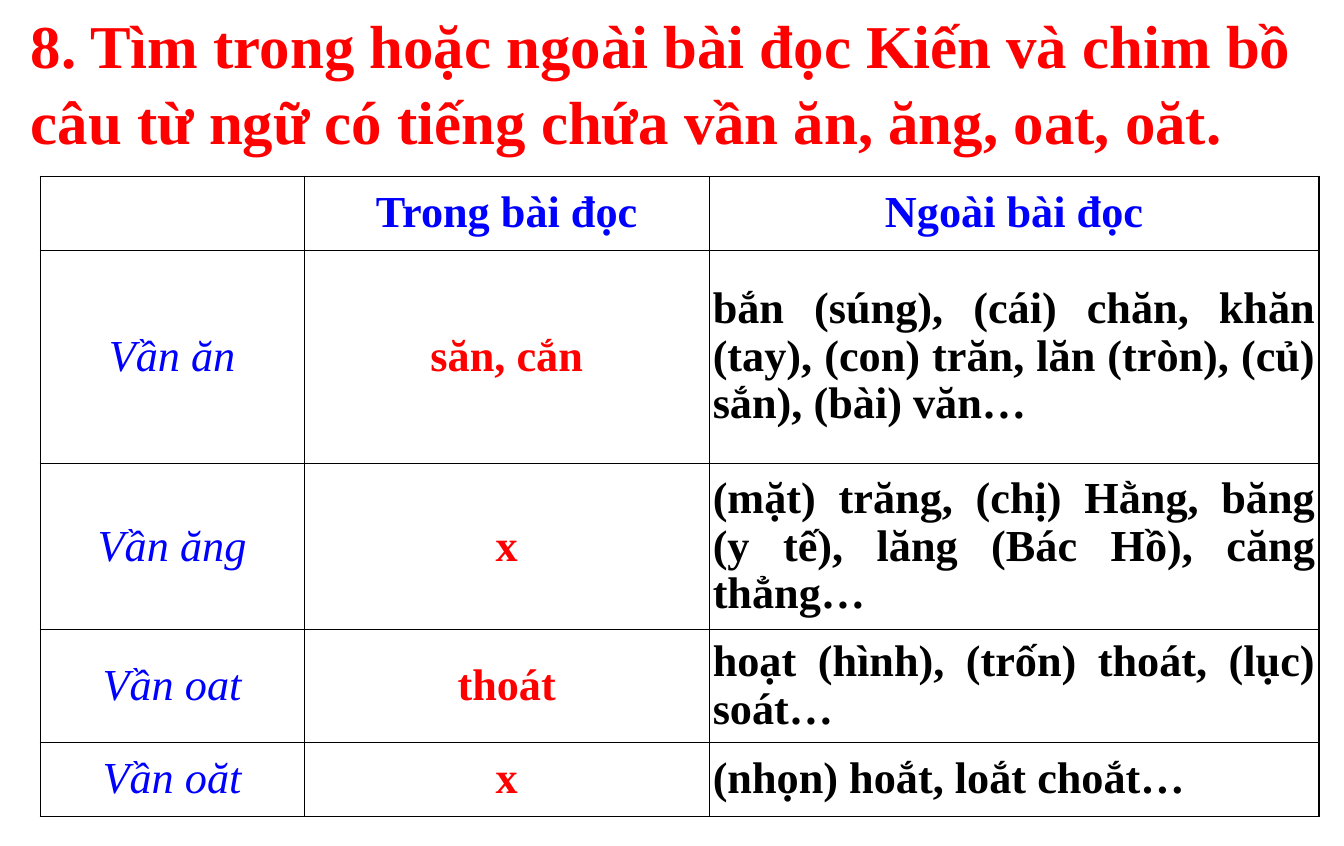
from lxml import etree
from pptx import Presentation
from pptx.dml import color
from pptx.enum import text
from pptx.oxml import ns
from pptx.util import Pt

FONT = "Times New Roman"
RED, BLUE, BLACK = "FF0000", "0000FF", "000000"
COLUMN_WIDTHS = [191, 293, 441]
ROW_HEIGHTS = [53.5, 154.5, 120, 81.5, 53.5]
HEADERS = ["", "Trong bài đọc", "Ngoài bài đọc"]
RHYMES = [
    ["Vần ăn", "săn, cắn",
     "bắn (súng), (cái) chăn, khăn (tay), (con) trăn, lăn (tròn), (củ) sắn), (bài) văn…"],
    ["Vần ăng", "x",
     "(mặt) trăng, (chị) Hằng, băng (y tế), lăng (Bác Hồ), căng thẳng…"],
    ["Vần oat", "thoát", "hoạt (hình), (trốn) thoát, (lục) soát…"],
    ["Vần oăt", "x", "(nhọn) hoắt, loắt choắt…"],
]
CENTER, JUSTIFY = text.PP_ALIGN.CENTER, text.PP_ALIGN.JUSTIFY
HEADER_STYLE = (BLUE, True, False, CENTER)
COLUMN_STYLES = [
    (BLUE, False, True, CENTER),
    (RED, True, False, CENTER),
    (BLACK, True, False, JUSTIFY),
]


def rgb(value):
    return color.RGBColor.from_string(value)


def format_text(text_frame, size, hex_color, bold, italic, alignment, spacing):
    for paragraph in text_frame.paragraphs:
        paragraph.alignment = alignment
        paragraph.line_spacing = spacing
        for run in paragraph.runs:
            run.font.name = FONT
            run.font.size = Pt(size)
            run.font.bold = bold
            run.font.italic = italic
            run.font.color.rgb = rgb(hex_color)


def add_borders(cell):
    properties = cell._tc.get_or_add_tcPr()
    for position, side in enumerate(["lnL", "lnR", "lnT", "lnB"]):
        line = etree.Element(ns.qn(f"a:{side}"), w=str(Pt(1)))
        fill = etree.SubElement(line, ns.qn("a:solidFill"))
        etree.SubElement(fill, ns.qn("a:srgbClr"), val=BLACK)
        properties.insert(position, line)


def add_title(slide, left, top, width, height):
    title = slide.shapes.title
    title.left, title.top, title.width, title.height = map(Pt, (left, top, width, height))
    text_frame = title.text_frame
    text_frame.text = "8. Tìm trong hoặc ngoài bài đọc Kiến và chim bồ câu từ ngữ có tiếng chứa vần ăn, ăng, oat, oăt."
    text_frame.word_wrap = True
    text_frame.auto_size = text.MSO_AUTO_SIZE.NONE
    text_frame.vertical_anchor = text.MSO_ANCHOR.TOP
    format_text(text_frame, 44, RED, True, False, text.PP_ALIGN.LEFT, 1.05)


def fill_cell(cell, value, style):
    cell.fill.background()
    cell.vertical_anchor = text.MSO_ANCHOR.MIDDLE
    cell.margin_left = cell.margin_right = Pt(2.5)
    cell.margin_top = cell.margin_bottom = Pt(2.5)
    cell.text_frame.text = value
    format_text(cell.text_frame, 32, *style, 0.97)
    add_borders(cell)


def add_rhyme_table(slide, left, top, width, height):
    rows = [HEADERS, *RHYMES]
    table = slide.shapes.add_table(
        len(rows), len(HEADERS), Pt(left), Pt(top), Pt(width), Pt(height)).table
    table.first_row = table.horz_banding = False
    for column, share in zip(table.columns, COLUMN_WIDTHS):
        column.width = Pt(width * share / sum(COLUMN_WIDTHS))
    for row, share in zip(table.rows, ROW_HEIGHTS):
        row.height = Pt(height * share / sum(ROW_HEIGHTS))
    for row_index, values in enumerate(rows):
        for column_index, value in enumerate(values):
            style = COLUMN_STYLES[column_index] if row_index else HEADER_STYLE
            fill_cell(table.cell(row_index, column_index), value, style)


def main():
    presentation = Presentation()
    presentation.slide_width, presentation.slide_height = Pt(972), Pt(612)
    slide = presentation.slides.add_slide(presentation.slide_layouts[5])
    add_title(slide, 15, -1, 948, 114)
    add_rhyme_table(slide, 29, 127.5, 925, 463)
    presentation.save("out.pptx")


if __name__ == "__main__":
    main()
